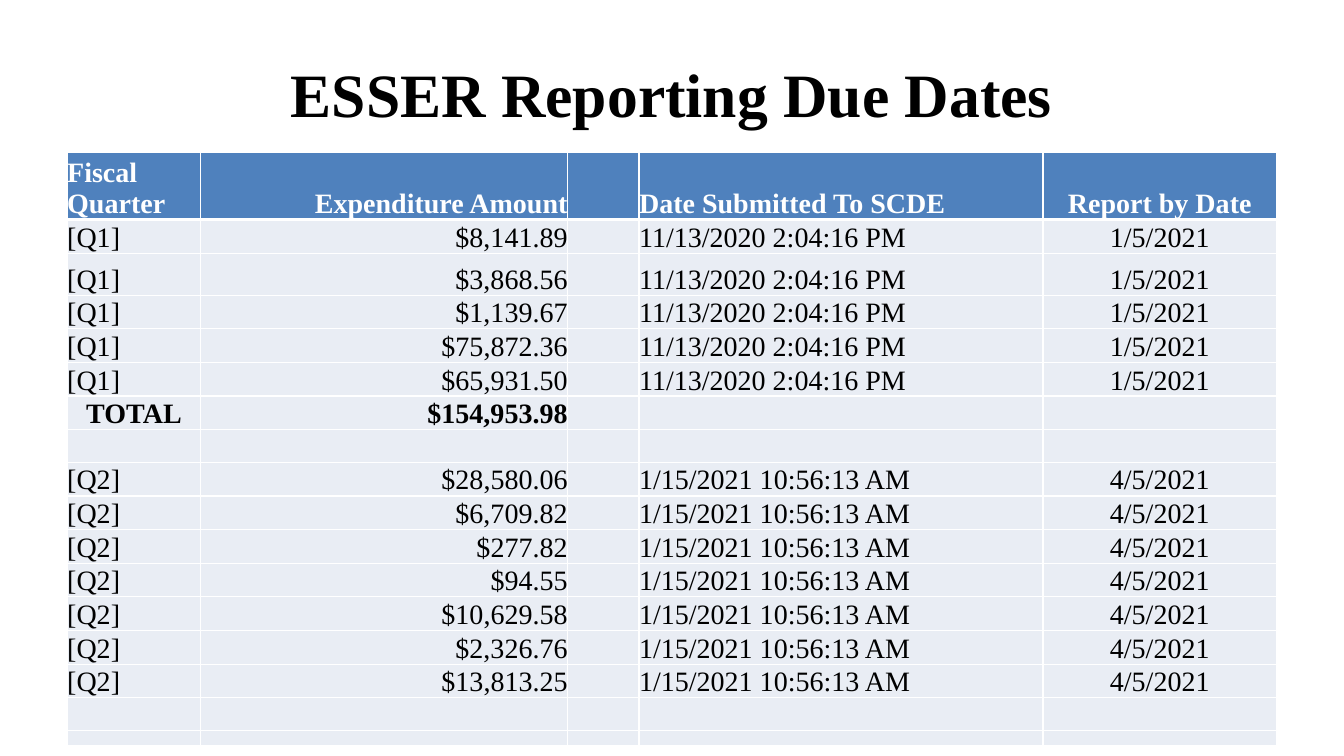
import lxml.etree
import pptx
import pptx.dml.color
import pptx.enum.text
import pptx.oxml.ns
import pptx.util

Pt = pptx.util.Pt
ALIGN = pptx.enum.text.PP_ALIGN
ANCHOR = pptx.enum.text.MSO_ANCHOR
FONT = "Times New Roman"
COLORS = {"ink": "000000", "head": "4F81BD", "body": "E9EDF4", "white": "FFFFFF"}

WIDTHS = [95.5, 262, 51, 288.5, 167]
ALIGNS = [ALIGN.LEFT, ALIGN.RIGHT, ALIGN.LEFT, ALIGN.LEFT, ALIGN.CENTER]
HEADS = ["Fiscal Quarter", "Expenditure Amount", "",
         "Date Submitted To SCDE", "Report by Date"]
ROW = 23.3
HEIGHTS = [44, ROW, 30] + [ROW] * 13 + [10.7]

FIRST = ["$8,141.89", "$3,868.56", "$1,139.67", "$75,872.36", "$65,931.50"]
SECOND = ["$28,580.06", "$6,709.82", "$277.82", "$94.55", "$10,629.58",
          "$2,326.76", "$13,813.25"]
BLANK = [""] * 5


def color(name):
    return pptx.dml.color.RGBColor.from_string(COLORS[name])


def style(para, size, ink, bold, align):
    para.alignment = align
    for run in para.runs:
        run.font.name = FONT
        run.font.size = Pt(size)
        run.font.bold = bold
        run.font.color.rgb = color(ink)


def add_title(slide, text):
    box = slide.shapes.add_textbox(Pt(48), Pt(21.6), Pt(864), Pt(90))
    frame = box.text_frame
    frame.word_wrap = True
    frame.vertical_anchor = ANCHOR.MIDDLE
    frame.text = text
    style(frame.paragraphs[0], 44, "ink", True, ALIGN.CENTER)


def add_edges(cell):
    """Draw white cell borders, with a thick one below."""
    props = cell._tc.get_or_add_tcPr()
    for side, width in (("L", 1), ("R", 1), ("T", 1), ("B", 3)):
        line = lxml.etree.SubElement(
            props, pptx.oxml.ns.qn("a:ln" + side), w=str(Pt(width)))
        fill = lxml.etree.SubElement(line, pptx.oxml.ns.qn("a:solidFill"))
        lxml.etree.SubElement(
            fill, pptx.oxml.ns.qn("a:srgbClr"), val=COLORS["white"])


def fill_cell(cell, text, head, bold, align):
    if head:
        add_edges(cell)
    cell.fill.solid()
    cell.fill.fore_color.rgb = color("head" if head else "body")
    cell.margin_left = cell.margin_right = 0
    cell.margin_top = cell.margin_bottom = 0
    cell.vertical_anchor = ANCHOR.BOTTOM
    para = cell.text_frame.paragraphs[0]
    if text:
        para.text = text
        style(para, 20, "white" if head else "ink", bold, align)
    else:
        # A small end mark keeps empty rows from growing
        lxml.etree.SubElement(
            para._p, pptx.oxml.ns.qn("a:endParaRPr"), sz="800")


def list_rows(label, sums, sent, due):
    return [[label, amount, "", sent, due] for amount in sums]


def add_grid(slide, rows):
    frame = slide.shapes.add_table(
        len(rows), len(WIDTHS), Pt(48), Pt(108.7),
        Pt(sum(WIDTHS)), Pt(sum(HEIGHTS)))
    table = frame.table
    table.horz_banding = False
    for col, width in zip(table.columns, WIDTHS):
        col.width = Pt(width)
    for row, height in zip(table.rows, HEIGHTS):
        row.height = Pt(height)
    for r, texts in enumerate(rows):
        head, total = r == 0, texts[0] == "TOTAL"
        for c, text in enumerate(texts):
            align = ALIGN.CENTER if total and c == 0 else ALIGNS[c]
            fill_cell(table.cell(r, c), text, head, head or total, align)


def main():
    deck = pptx.Presentation()
    deck.slide_width, deck.slide_height = Pt(960), Pt(540)
    slide = deck.slides.add_slide(deck.slide_layouts[6])
    add_title(slide, "ESSER Reporting Due Dates")
    rows = [HEADS]
    rows += list_rows("[Q1]", FIRST, "11/13/2020 2:04:16 PM", "1/5/2021")
    rows += [["TOTAL", "$154,953.98", "", "", ""], BLANK]
    rows += list_rows("[Q2]", SECOND, "1/15/2021 10:56:13 AM", "4/5/2021")
    rows += [BLANK, BLANK]
    add_grid(slide, rows)
    deck.save("out.pptx")


if __name__ == "__main__":
    main()
